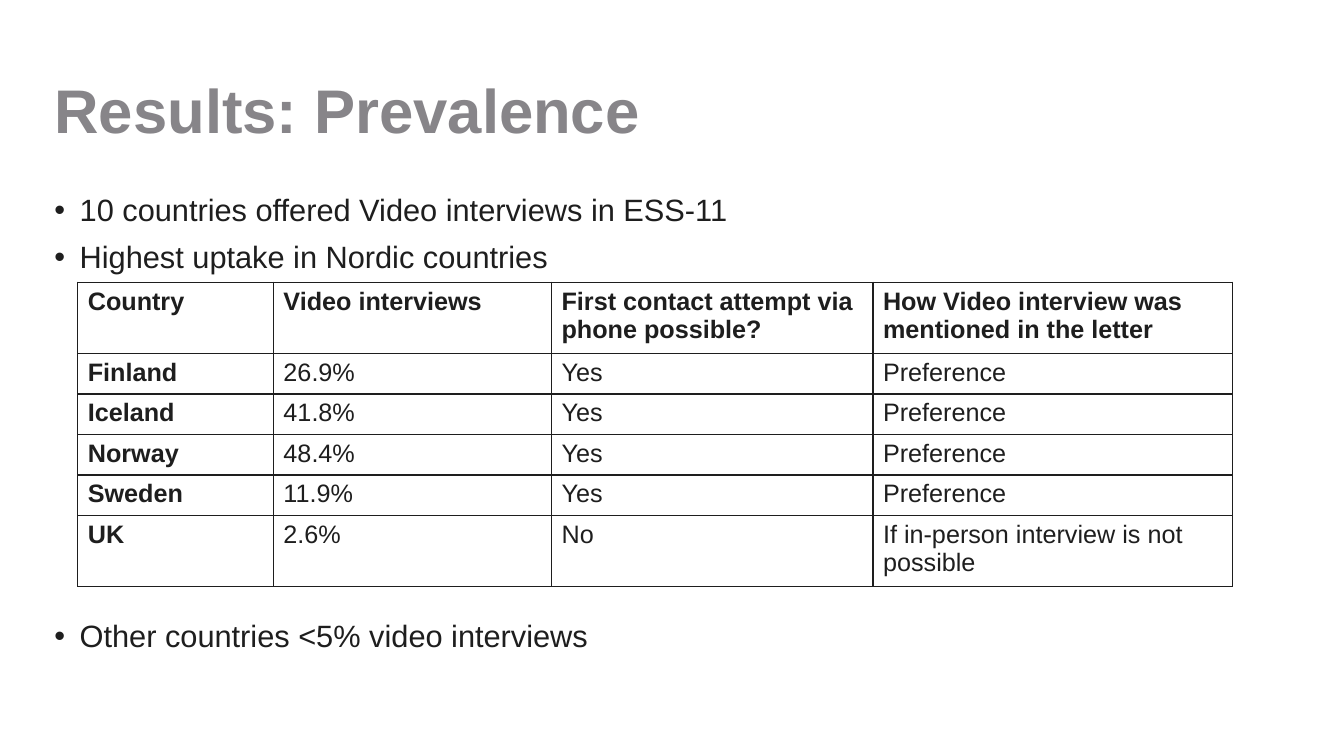
from lxml.etree import SubElement as Sub
from pptx import Presentation
from pptx.dml.color import RGBColor
from pptx.enum.text import MSO_ANCHOR as Anchor, PP_ALIGN as Align
from pptx.oxml.ns import qn
from pptx.util import Cm, Pt

GREY = RGBColor(0x87, 0x85, 0x89)
INK = RGBColor(0x1E, 0x1E, 0x1E)
FONT = "Arial"

POINTS = [
    ("10 countries offered Video interviews in ESS-11", 0),
    ("Highest uptake in Nordic countries", 10),
    ("Other countries <5% video interviews", 247),
]
ROWS = [
    ("Country", "Video interviews", "First contact attempt via phone possible?",
     "How Video interview was mentioned in the letter"),
    ("Finland", "26.9%", "Yes", "Preference"),
    ("Iceland", "41.8%", "Yes", "Preference"),
    ("Norway", "48.4%", "Yes", "Preference"),
    ("Sweden", "11.9%", "Yes", "Preference"),
    ("UK", "2.6%", "No", "If in-person interview is not possible"),
]
WIDTHS = [4.93, 7.01, 8.1, 9.07]
HEIGHTS = [1.8] + [1.02] * 4 + [1.6]


class Deck:
    """Holds the style and the current slide."""

    def __init__(self):
        self.prs = Presentation()
        self.prs.slide_width, self.prs.slide_height = Cm(33.87), Cm(19.05)
        self.slide = self.prs.slides.add_slide(self.prs.slide_layouts[5])

    def text(self, para, words, size, color=INK, bold=False):
        run = para.add_run()
        run.text = words
        font = run.font
        font.name, font.size, font.bold = FONT, Pt(size), bold
        font.color.rgb = color

    def title(self, words, left, top, width, height):
        shape = self.slide.shapes.title
        shape.left, shape.top = Cm(left), Cm(top)
        shape.width, shape.height = Cm(width), Cm(height)
        frame = shape.text_frame
        frame.vertical_anchor = Anchor.MIDDLE
        para = frame.paragraphs[0]
        para.alignment, para.line_spacing = Align.LEFT, 0.9
        self.text(para, words, 44, GREY, True)

    def bullets(self, points, left, top, width, height):
        box = self.slide.shapes.add_textbox(Cm(left), Cm(top), Cm(width), Cm(height))
        frame = box.text_frame
        frame.word_wrap = True
        for i, (words, gap) in enumerate(points):
            para = frame.add_paragraph() if i else frame.paragraphs[0]
            props = para._p.get_or_add_pPr()
            props.set("marL", str(Cm(0.64)))
            props.set("indent", str(-Cm(0.64)))
            Sub(props, qn("a:buFont"), typeface=FONT)
            Sub(props, qn("a:buChar"), char="•")
            para.line_spacing, para.space_before = 0.9, Pt(gap)
            self.text(para, words, 22)

    def border(self, cell):
        props = cell._tc.get_or_add_tcPr()
        for side in "LRTB":
            line = Sub(props, qn(f"a:ln{side}"), w=str(Pt(1)))
            fill = Sub(line, qn("a:solidFill"))
            Sub(fill, qn("a:srgbClr"), val=str(INK))

    def table(self, rows, widths, heights, left, top):
        table = self.slide.shapes.add_table(
            len(rows), len(widths), Cm(left), Cm(top),
            Cm(sum(widths)), Cm(sum(heights))).table
        table.horz_banding = False
        for col, width in zip(table.columns, widths):
            col.width = Cm(width)
        for row, height in zip(table.rows, heights):
            row.height = Cm(height)
        for r, row in enumerate(rows):
            for c, words in enumerate(row):
                cell = table.cell(r, c)
                self.border(cell)
                cell.fill.background()
                para = cell.text_frame.paragraphs[0]
                self.text(para, words, 18, bold=r == 0 or c == 0)


def main():
    deck = Deck()
    deck.title("Results: Prevalence", 1.12, 1.02, 31.62, 3.68)
    deck.bullets(POINTS, 1.12, 4.78, 31.09, 11.89)
    deck.table(ROWS, WIDTHS, HEIGHTS, 1.96, 7.11)
    deck.prs.save("out.pptx")


if __name__ == "__main__":
    main()
